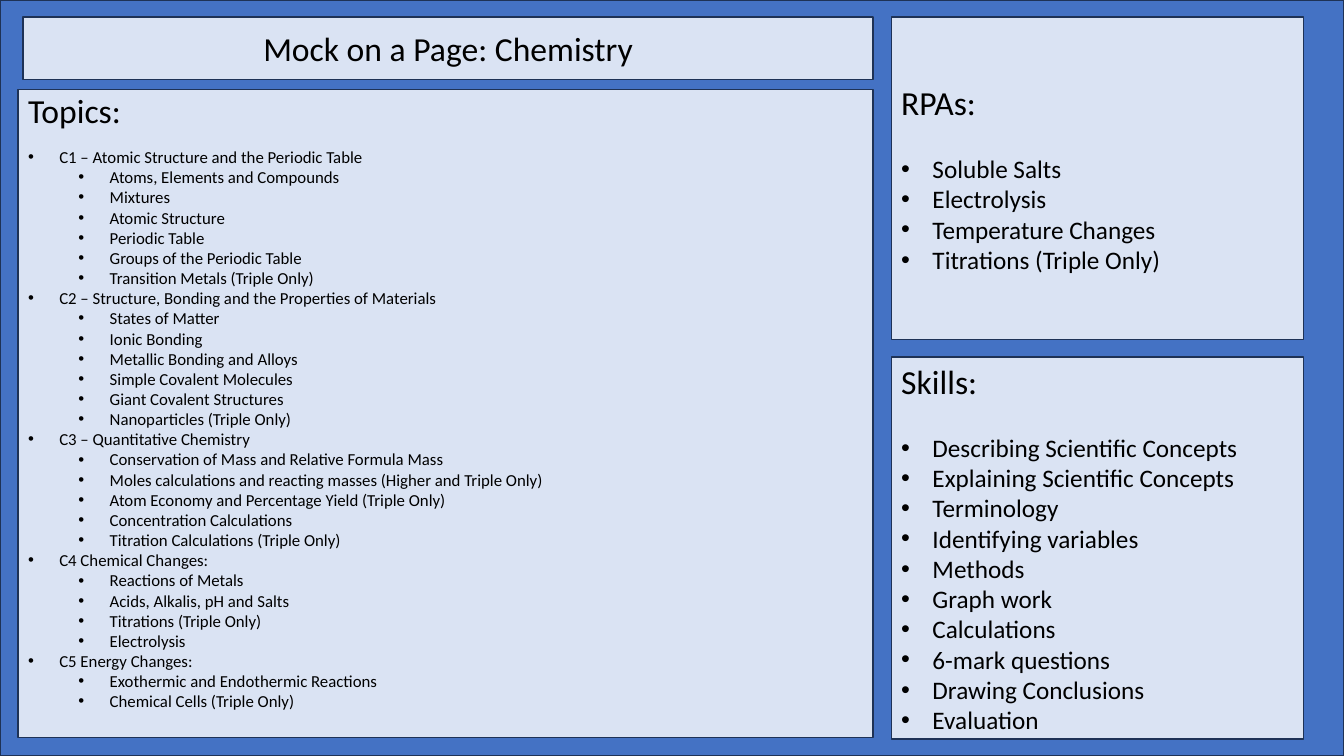
from lxml.etree import SubElement
from pptx import Presentation
from pptx.dml.color import RGBColor
from pptx.enum.shapes import MSO_SHAPE as Shape
from pptx.enum.text import MSO_ANCHOR as Anchor, MSO_AUTO_SIZE as AutoSize, PP_ALIGN as Align
from pptx.oxml.ns import qn
from pptx.util import Inches, Pt

BLUE, PALE, NAVY, BLACK = "4472C4", "DAE3F3", "1E3256", "000000"
FONT = "Calibri"
HEADING_SIZE = 24
HANG = 0.31
LEVEL_STEP = 0.5

TOPICS = {
    "C1 – Atomic Structure and the Periodic Table": [
        "Atoms, Elements and Compounds", "Mixtures", "Atomic Structure", "Periodic Table",
        "Groups of the Periodic Table", "Transition Metals (Triple Only)"],
    "C2 – Structure, Bonding and the Properties of Materials": [
        "States of Matter", "Ionic Bonding", "Metallic Bonding and Alloys",
        "Simple Covalent Molecules", "Giant Covalent Structures", "Nanoparticles (Triple Only)"],
    "C3 – Quantitative Chemistry": [
        "Conservation of Mass and Relative Formula Mass",
        "Moles calculations and reacting masses (Higher and Triple Only)",
        "Atom Economy and Percentage Yield (Triple Only)",
        "Concentration Calculations", "Titration Calculations (Triple Only)"],
    "C4 Chemical Changes:": [
        "Reactions of Metals", "Acids, Alkalis, pH and Salts",
        "Titrations (Triple Only)", "Electrolysis"],
    "C5 Energy Changes:": [
        "Exothermic and Endothermic Reactions", "Chemical Cells (Triple Only)"],
}
PRACTICALS = ["Soluble Salts", "Electrolysis", "Temperature Changes", "Titrations (Triple Only)"]
SKILLS = [
    "Describing Scientific Concepts", "Explaining Scientific Concepts", "Terminology",
    "Identifying variables", "Methods", "Graph work", "Calculations", "6-mark questions",
    "Drawing Conclusions", "Evaluation"]


def color(value):
    return RGBColor.from_string(value)


def paint(shape, fill):
    shape.fill.solid()
    shape.fill.fore_color.rgb = color(fill)
    shape.line.color.rgb = color(NAVY)
    shape.line.width = Pt(1)


def add_panel(slide, box, fill):
    shape = slide.shapes.add_shape(Shape.RECTANGLE, *map(Inches, box))
    shape.shadow.inherit = False
    paint(shape, fill)
    return shape


def write(paragraph, text, size, align=Align.LEFT):
    paragraph.alignment = align
    paragraph.line_spacing = 1.0
    run = paragraph.add_run()
    run.text = text
    run.font.name = FONT
    run.font.size = Pt(size)
    run.font.color.rgb = color(BLACK)


def add_bullet(paragraph, level):
    paragraph.level = level
    properties = paragraph._p.get_or_add_pPr()
    properties.set("marL", str(Inches(HANG + level * LEVEL_STEP)))
    properties.set("indent", str(-Inches(HANG)))
    SubElement(properties, qn("a:buFont"), typeface="Arial")
    SubElement(properties, qn("a:buChar"), char="•")


def add_title(slide, box, text):
    title = slide.shapes.title
    title.left, title.top, title.width, title.height = map(Inches, box)
    paint(title, PALE)
    frame = title.text_frame
    frame.auto_size = AutoSize.NONE
    frame.vertical_anchor = Anchor.MIDDLE
    write(frame.paragraphs[0], text, HEADING_SIZE, Align.CENTER)


def add_list(slide, box, heading, items, size, gap):
    frame = add_panel(slide, box, PALE).text_frame
    frame.word_wrap = True
    frame.vertical_anchor = Anchor.MIDDLE
    write(frame.paragraphs[0], heading, HEADING_SIZE)
    frame.paragraphs[0].space_after = Pt(gap)
    for level, text in items:
        paragraph = frame.add_paragraph()
        write(paragraph, text, size)
        add_bullet(paragraph, level)
    return frame


def add_topics(slide, box):
    items = []
    for unit, lessons in TOPICS.items():
        items.append((0, unit))
        items.extend((1, lesson) for lesson in lessons)
    frame = add_list(slide, box, "Topics:", items, 12, 12)
    frame.vertical_anchor = Anchor.TOP
    frame.margin_top = frame.margin_bottom = 0


def add_side_list(slide, box, heading, texts):
    add_list(slide, box, heading, [(0, text) for text in texts], 18, 22)


def main():
    presentation = Presentation()
    presentation.slide_width = Inches(13.33)
    presentation.slide_height = Inches(7.5)
    slide = presentation.slides.add_slide(presentation.slide_layouts[5])

    backdrop = add_panel(slide, (0, 0, 13.33, 7.5), BLUE)
    slide.shapes.title.element.addprevious(backdrop.element)
    add_title(slide, (0.23, 0.17, 8.43, 0.62), "Mock on a Page: Chemistry")
    add_side_list(slide, (8.84, 0.17, 4.09, 3.2), "RPAs:", PRACTICALS)
    add_topics(slide, (0.18, 0.89, 8.48, 6.43))
    add_side_list(slide, (8.84, 3.54, 4.09, 3.79), "Skills:", SKILLS)
    presentation.save("out.pptx")


if __name__ == "__main__":
    main()
